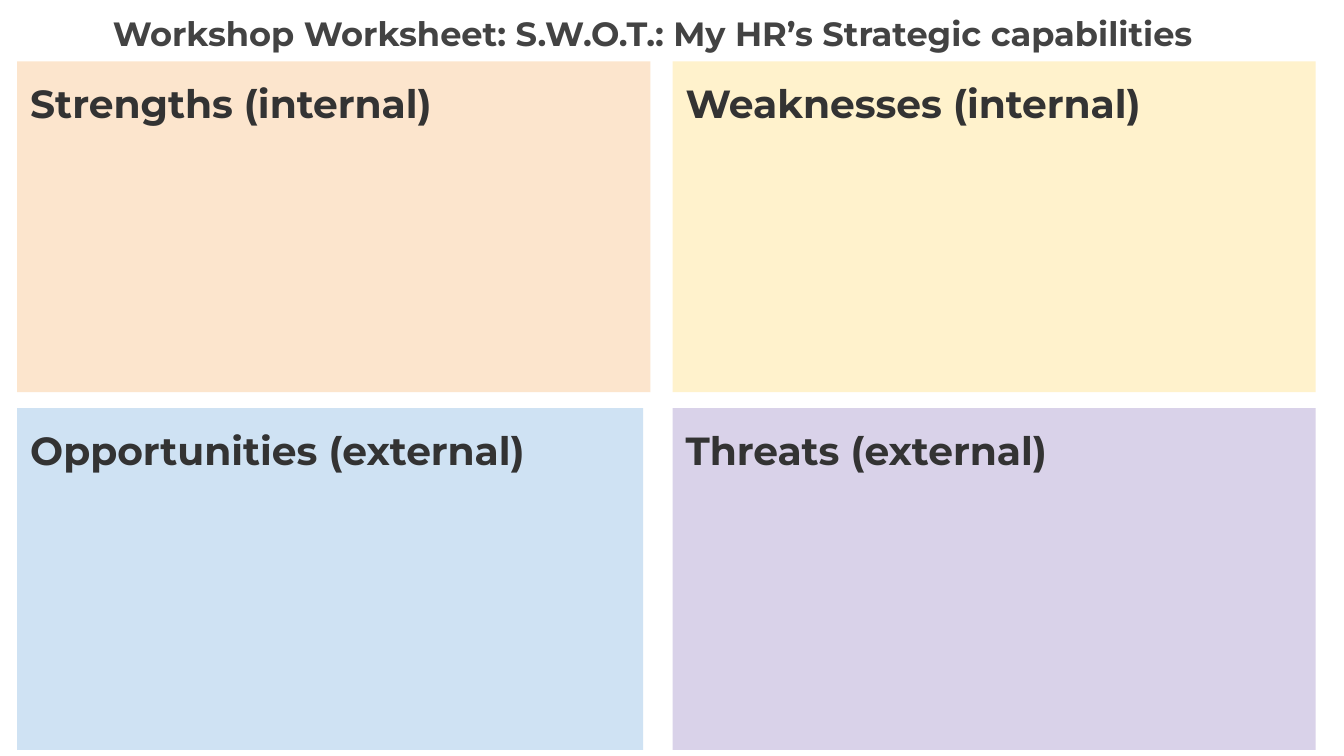
from pptx import Presentation
from pptx.util import Inches, Pt
from pptx.dml.color import RGBColor
from pptx.enum.shapes import MSO_SHAPE
from pptx.enum.text import MSO_ANCHOR, PP_ALIGN

GRAY = RGBColor(0x43, 0x43, 0x43)
DARK = RGBColor(0x33, 0x33, 0x33)
PEACH = RGBColor(0xFC, 0xE5, 0xCD)
CREAM = RGBColor(0xFF, 0xF2, 0xCC)
BLUE = RGBColor(0xCF, 0xE2, 0xF3)
LILAC = RGBColor(0xD9, 0xD2, 0xE9)


def write(shape, text, size, color, layout):
    frame = shape.text_frame
    frame.word_wrap = True
    frame.vertical_anchor = MSO_ANCHOR.TOP
    for side in ("left", "top", "right", "bottom"):
        setattr(frame, "margin_" + side, Inches(0.13))
    para = frame.paragraphs[0]
    for name, value in layout.items():
        setattr(para, name, value)
    run = para.add_run()
    run.text = text
    style = {"name": "Montserrat", "size": Pt(size), "bold": True}
    for name, value in style.items():
        setattr(run.font, name, value)
    run.font.color.rgb = color


deck = Presentation()
deck.slide_width = Inches(13.33)
deck.slide_height = Inches(7.5)
slide = deck.slides.add_slide(deck.slide_layouts[6])

title = slide.shapes.add_textbox(Inches(0.31), Inches(0.04), Inches(12.42), Inches(0.4))
write(title, "Workshop Worksheet: S.W.O.T.: My HR’s Strategic capabilities ", 24, GRAY,
      {"alignment": PP_ALIGN.CENTER, "line_spacing": 0.9})

lefts = (0.17, 6.67)
rows = ((0.61, 3.28), (4.05, 3.39))
panels = (
    ("Strengths (internal)", PEACH, 6.28),
    ("Weaknesses (internal)", CREAM, 6.38),
    ("Opportunities (external)", BLUE, 6.21),
    ("Threats (external)", LILAC, 6.38),
)
for index, (label, fill, width) in enumerate(panels):
    left = lefts[index % 2]
    top, height = rows[index // 2]
    panel = slide.shapes.add_shape(MSO_SHAPE.RECTANGLE, Inches(left), Inches(top),
                                   Inches(width), Inches(height))
    panel.shadow.inherit = False
    panel.fill.solid()
    panel.fill.fore_color.rgb = fill
    panel.line.fill.background()
    write(panel, label, 28, DARK,
          {"alignment": PP_ALIGN.LEFT, "line_spacing": 1.1, "space_before": Pt(20)})

deck.save("out.pptx")
